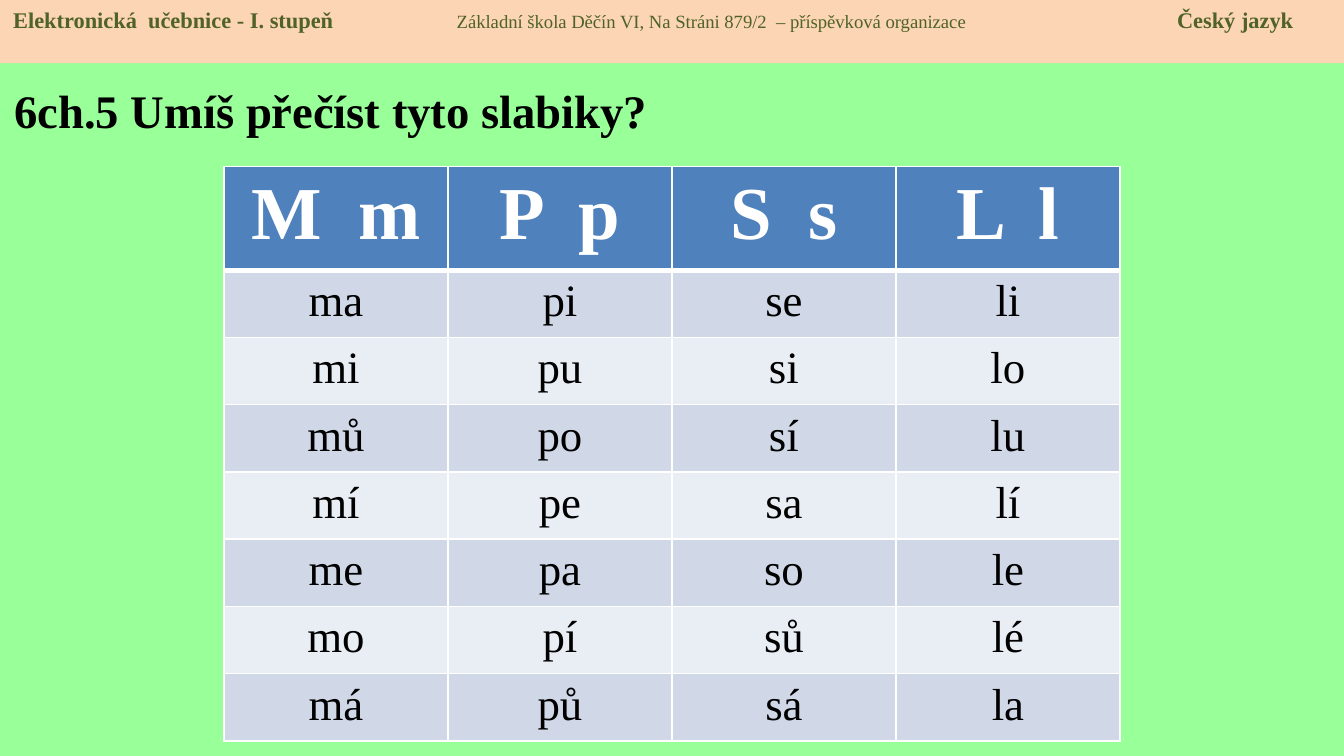
"""Build a Czech reading slide with a table of syllables."""
from dataclasses import dataclass

from lxml import etree
from pptx import Presentation
from pptx.dml.color import RGBColor
from pptx.enum import shapes, text
from pptx.oxml import ns
from pptx.util import Inches, Pt

FONT = "Times New Roman"
COLORS = {
    "background": "99FF99",
    "banner": "FCD5B5",
    "banner_text": "4F6228",
    "black": "000000",
    "white": "FFFFFF",
    "header": "4F81BD",
    "odd": "D0D8E8",
    "even": "E9EDF4",
}
SLIDE_WIDTH = 10
SLIDE_HEIGHT = SLIDE_WIDTH * 9 / 16
BANNER_TABS = (3.3, 8.66)
COLUMN_WIDTH = SLIDE_WIDTH / 6
HEADER_HEIGHT = 0.77
ROW_HEIGHT = 0.5
SYLLABLES = (
    ("M  m", "P  p", "S  s", "L  l"),
    ("ma", "pi", "se", "li"),
    ("mi", "pu", "si", "lo"),
    ("mů", "po", "sí", "lu"),
    ("mí", "pe", "sa", "lí"),
    ("me", "pa", "so", "le"),
    ("mo", "pí", "sů", "lé"),
    ("má", "pů", "sá", "la"),
)


@dataclass(frozen=True)
class Style:
    size: int
    color: str
    bold: bool = False


@dataclass(frozen=True)
class RowStyle:
    fill: str
    text: Style
    top: int = 1
    bottom: int = 1


BANNER_BOLD = Style(12, "banner_text", True)
BANNER_PLAIN = Style(10, "banner_text")
BANNER_RUNS = (
    ("Elektronická  učebnice - I. stupeň", BANNER_BOLD),
    ("\tZákladní škola Děčín VI, Na Stráni 879/2  – příspěvková organizace\t", BANNER_PLAIN),
    ("Český jazyk", BANNER_BOLD),
)


def paint(fill, color: str) -> None:
    fill.solid()
    fill.fore_color.rgb = RGBColor.from_string(COLORS[color])


def add_run(paragraph, wording: str, style: Style) -> None:
    run = paragraph.add_run()
    run.text = wording
    run.font.name = FONT
    run.font.size = Pt(style.size)
    run.font.bold = style.bold
    run.font.color.rgb = RGBColor.from_string(COLORS[style.color])


def add_banner(slide) -> None:
    banner = slide.shapes.add_shape(
        shapes.MSO_SHAPE.RECTANGLE, 0, 0, Inches(SLIDE_WIDTH), Inches(0.47))
    banner.shadow.inherit = False
    paint(banner.fill, "banner")
    banner.line.fill.background()
    frame = banner.text_frame
    frame.word_wrap = True
    frame.vertical_anchor = text.MSO_ANCHOR.TOP
    paragraph = frame.paragraphs[0]
    paragraph.alignment = text.PP_ALIGN.LEFT
    properties = paragraph._p.get_or_add_pPr()
    tabs = etree.SubElement(properties, ns.qn("a:tabLst"))
    for position in BANNER_TABS:
        etree.SubElement(tabs, ns.qn("a:tab"), pos=str(Inches(position)), algn="l")
    for wording, style in BANNER_RUNS:
        add_run(paragraph, wording, style)


def add_title(slide) -> None:
    title = slide.shapes.add_textbox(Inches(0.01), Inches(0.47), Inches(5.7), Inches(0.7))
    frame = title.text_frame
    frame.word_wrap = True
    frame.vertical_anchor = text.MSO_ANCHOR.MIDDLE
    add_run(frame.paragraphs[0], "6ch.5 Umíš přečíst tyto slabiky?", Style(25, "black", True))


def set_borders(cell, top: int, bottom: int) -> None:
    properties = cell._tc.get_or_add_tcPr()
    sides = (("lnL", 1), ("lnR", 1), ("lnT", top), ("lnB", bottom))
    for index, (side, width) in enumerate(sides):
        line = etree.Element(ns.qn(f"a:{side}"), w=str(Pt(width)))
        fill = etree.SubElement(line, ns.qn("a:solidFill"))
        etree.SubElement(fill, ns.qn("a:srgbClr"), val=COLORS["white"])
        properties.insert(index, line)


def row_style(index: int) -> RowStyle:
    if index == 0:
        return RowStyle("header", Style(40, "white", True), bottom=3)
    fill = "odd" if index % 2 else "even"
    return RowStyle(fill, Style(24, "black"), top=3 if index == 1 else 1)


def add_syllable_table(slide) -> None:
    rows, columns = len(SYLLABLES), len(SYLLABLES[0])
    width = COLUMN_WIDTH * columns
    height = HEADER_HEIGHT + ROW_HEIGHT * (rows - 1)
    table = slide.shapes.add_table(
        rows, columns, Inches((SLIDE_WIDTH - width) / 2), Inches(1.24),
        Inches(width), Inches(height)).table
    table.first_row = False
    table.horz_banding = False
    for column in table.columns:
        column.width = Inches(COLUMN_WIDTH)
    for index, syllables in enumerate(SYLLABLES):
        style = row_style(index)
        table.rows[index].height = Inches(ROW_HEIGHT if index else HEADER_HEIGHT)
        for cell, syllable in zip(table.rows[index].cells, syllables):
            paint(cell.fill, style.fill)
            set_borders(cell, style.top, style.bottom)
            paragraph = cell.text_frame.paragraphs[0]
            paragraph.alignment = text.PP_ALIGN.CENTER
            add_run(paragraph, syllable, style.text)


def main() -> None:
    presentation = Presentation()
    presentation.slide_width = Inches(SLIDE_WIDTH)
    presentation.slide_height = Inches(SLIDE_HEIGHT)
    slide = presentation.slides.add_slide(presentation.slide_layouts[6])
    paint(slide.background.fill, "background")
    add_title(slide)
    add_banner(slide)
    add_syllable_table(slide)
    presentation.save("out.pptx")


if __name__ == "__main__":
    main()
